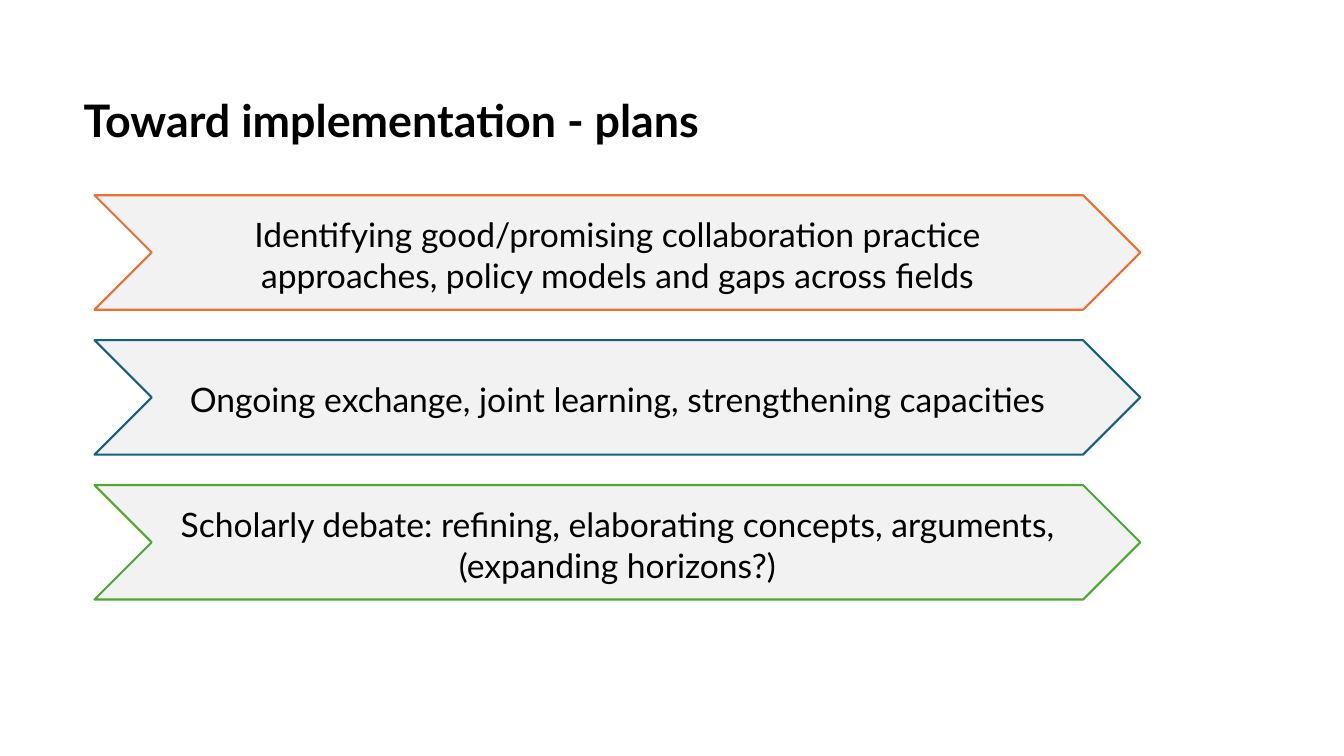
"""Build the implementation plans slide with three outlined chevrons."""
from pptx import Presentation
from pptx.dml.color import RGBColor
from pptx.enum.shapes import MSO_SHAPE
from pptx.enum.text import MSO_ANCHOR as ANCHOR, MSO_AUTO_SIZE as AUTO, PP_ALIGN as ALIGN
from pptx.util import Emu, Pt

COLORS = {
    "text": "000000",
    "fill": "F2F2F2",
    "orange": "E97132",
    "blue": "156082",
    "green": "4EA72E",
}
PLANS = [
    ("Identifying good/promising collaboration practice approaches, "
     "policy models and gaps across fields", "orange"),
    ("Ongoing exchange, joint learning, strengthening capacities", "blue"),
    ("Scholarly debate: refining, elaborating concepts, arguments, "
     "(expanding horizons?)", "green"),
]


def px(n):
    return Emu(n * 9525)


def rgb(name):
    return RGBColor.from_string(COLORS[name])


class Deck:
    font = "Lato"

    def __init__(self):
        self.prs = Presentation()
        self.prs.slide_width, self.prs.slide_height = px(1280), px(720)
        self.slide = self.prs.slides.add_slide(self.prs.slide_layouts[5])

    def add_text(self, sp, text, size, align, bold=False, spacing=1.0):
        tf = sp.text_frame
        tf.word_wrap = True
        tf.auto_size = AUTO.NONE
        tf.vertical_anchor = ANCHOR.MIDDLE
        p = tf.paragraphs[0]
        p.alignment = align
        p.line_spacing = spacing
        r = p.add_run()
        r.text = text
        r.font.name = self.font
        r.font.size = Pt(size)
        r.font.bold = bold
        r.font.color.rgb = rgb("text")
        return tf

    def title(self, text, x, y, w, h):
        sp = self.slide.shapes.title
        sp.left, sp.top, sp.width, sp.height = map(px, (x, y, w, h))
        self.add_text(sp, text, 32, ALIGN.LEFT, bold=True, spacing=0.9)

    def chevron(self, text, color, x, y, w, h):
        sp = self.slide.shapes.add_shape(MSO_SHAPE.CHEVRON, *map(px, (x, y, w, h)))
        sp.shadow.inherit = False
        sp.fill.solid()
        sp.fill.fore_color.rgb = rgb("fill")
        sp.line.color.rgb = rgb(color)
        sp.line.width = Pt(1.5)
        tf = self.add_text(sp, text, 24, ALIGN.CENTER)
        tf.margin_left = tf.margin_right = px(14)
        tf.margin_top, tf.margin_bottom = px(6), px(2)


def main():
    deck = Deck()
    deck.title("Toward implementation - plans", 70, 58, 1163, 119)
    for i, (text, color) in enumerate(PLANS):
        deck.chevron(text, color, 90, 186 + 138 * i, 996, 109)
    deck.prs.save("out.pptx")


if __name__ == "__main__":
    main()
